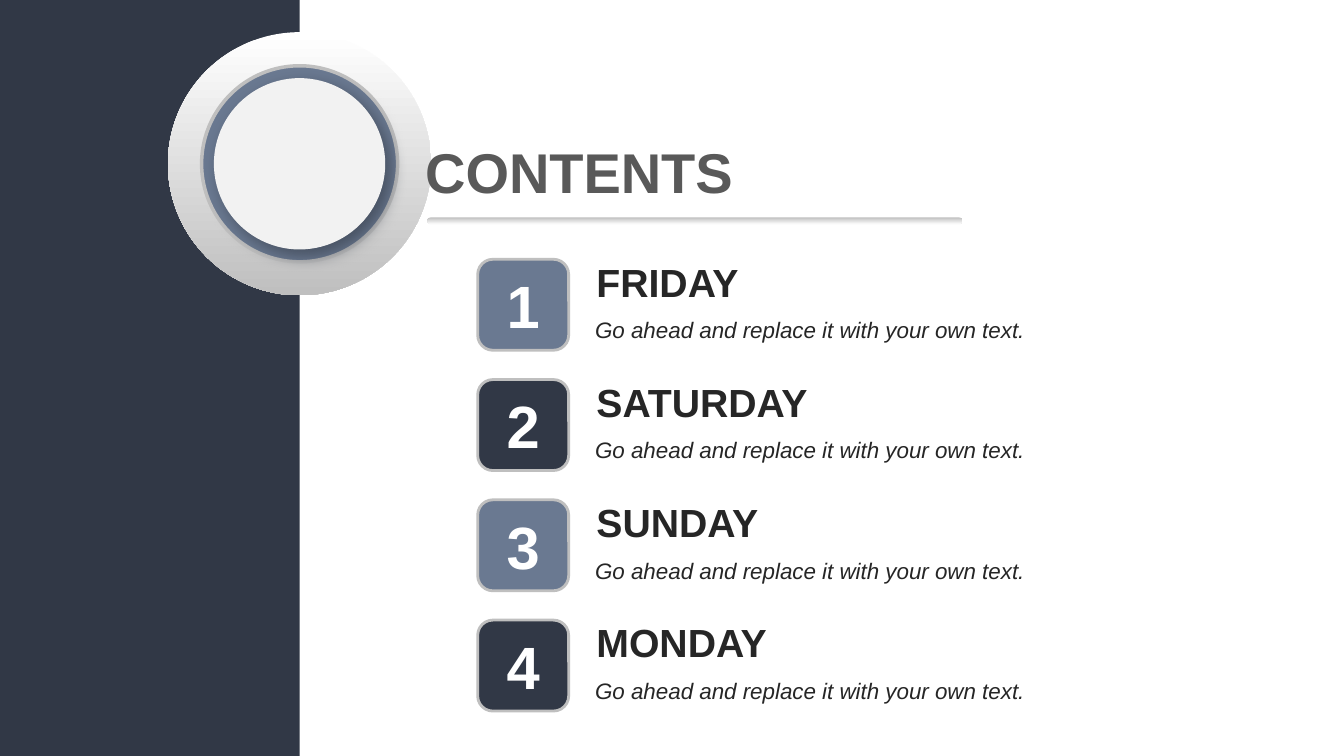
"""Build a contents slide with a notched side panel and four numbered days."""
import math

import lxml.etree
import pptx
import pptx.dml.color
import pptx.enum.shapes
import pptx.enum.text
import pptx.oxml.ns
import pptx.util

Pt = pptx.util.Pt
SHAPES = pptx.enum.shapes.MSO_SHAPE
COLOURS = {
    "navy": "313846", "slate": "6A7991", "silver": "BFBFBF", "white": "FFFFFF",
    "disc": "F2F2F2", "title": "595959", "body": "262626", "shadow": "353C48",
}
DAYS = ["FRIDAY", "SATURDAY", "SUNDAY", "MONDAY"]
DETAIL = "Go ahead and replace it with your own text."


def colour(name):
    """Return the named colour."""
    return pptx.dml.color.RGBColor.from_string(COLOURS[name])


def paint(shape, fill, line=None, width=0):
    """Give a shape a solid fill, an optional outline and no shadow."""
    shape.shadow.inherit = False
    shape.fill.solid()
    shape.fill.fore_color.rgb = colour(fill)
    if line:
        shape.line.color.rgb = colour(line)
        shape.line.width = Pt(width)
    else:
        shape.line.fill.background()


def shade(shape, top, bottom):
    """Fill a shape with a gradient running from top to bottom."""
    paint(shape, top)
    shape.fill.gradient()
    shape.fill.gradient_angle = 270
    for stop, name in zip(shape.fill.gradient_stops, (top, bottom)):
        stop.color.rgb = colour(name)


def cast_shadow(shape, name, alpha, blur, distance, angle):
    """Add an outer shadow to a shape."""
    qn = pptx.oxml.ns.qn
    effects = shape._element.spPr.find(qn("a:effectLst"))
    outer = lxml.etree.SubElement(
        effects, qn("a:outerShdw"), blurRad=str(Pt(blur)), dist=str(Pt(distance)),
        dir=str(angle * 60000), algn="tl", rotWithShape="0")
    tint = lxml.etree.SubElement(outer, qn("a:srgbClr"), val=COLOURS[name])
    lxml.etree.SubElement(tint, qn("a:alpha"), val=str(alpha * 1000))


def write(shape, text, size, name, bold=False, italic=False):
    """Put one styled paragraph in a shape and return it."""
    shape.text_frame.word_wrap = True
    para = shape.text_frame.paragraphs[0]
    para.text = text
    font = para.font
    font.name, font.size, font.bold, font.italic = "Arial", Pt(size), bold, italic
    font.color.rgb = colour(name)
    return para


def add_text(page, left, top, width, height, *style, **emphasis):
    """Add a text box holding one styled paragraph."""
    box = page.shapes.add_textbox(Pt(left), Pt(top), Pt(width), Pt(height))
    write(box, *style, **emphasis)


def add_panel(page, left, top, right, bottom, notch_middle, notch_radius):
    """Draw the side panel with a half-round notch in its right edge."""
    arc = [(right - notch_radius * math.sin(math.radians(turn)),
            notch_middle - notch_radius * math.cos(math.radians(turn)))
           for turn in range(0, 181, 5)]
    outline = [(right, top), *arc, (right, bottom), (left, bottom)]
    builder = page.shapes.build_freeform(Pt(left), Pt(top))
    builder.add_line_segments([(Pt(x), Pt(y)) for x, y in outline])
    paint(builder.convert_to_shape(), "navy")


def add_medallion(page, middle_x, middle_y, radius):
    """Draw the three concentric circles around a centre."""
    rim, ring, disc = [
        page.shapes.add_shape(SHAPES.OVAL, Pt(middle_x - r), Pt(middle_y - r), Pt(2 * r), Pt(2 * r))
        for r in (radius, radius - 24, radius - 32.8)]
    shade(rim, "white", "silver")
    paint(ring, "slate", "silver", 2.5)
    paint(disc, "disc")
    cast_shadow(disc, "shadow", 64, 12, 6, 45)


def add_title(page, left, top):
    """Write the title above its shaded rule."""
    add_text(page, left, top, 334, 55.4, "CONTENTS", 40, "title", bold=True)
    rule = page.shapes.add_shape(
        SHAPES.ROUNDED_RECTANGLE, Pt(left + 8.6), Pt(top + 60.3), Pt(382.3), Pt(5))
    rule.adjustments[0] = 0.5
    shade(rule, "silver", "white")


def add_day(page, left, top, number, day):
    """Draw one numbered badge with its heading and detail."""
    add_text(page, left + 77.8, top - 4.5, 232.6, 41, day, 28, "body", bold=True)
    badge = page.shapes.add_shape(
        SHAPES.ROUNDED_RECTANGLE, Pt(left), Pt(top), Pt(65), Pt(65))
    paint(badge, "slate" if number % 2 else "navy", "silver", 2)
    badge.text_frame.vertical_anchor = pptx.enum.text.MSO_ANCHOR.MIDDLE
    para = write(badge, str(number), 42.6, "white", bold=True)
    para.alignment = pptx.enum.text.PP_ALIGN.CENTER
    add_text(page, left + 76.8, top + 37.2, 325.4, 26.6, DETAIL, 16, "body", italic=True)


def main():
    """Build and save the deck."""
    deck = pptx.Presentation()
    deck.slide_width, deck.slide_height = Pt(960), Pt(540)
    page = deck.slides.add_slide(deck.slide_layouts[6])
    add_panel(page, -9.4, 0, 214, 540, 117, 86)
    add_medallion(page, 214, 117, 94)
    add_title(page, 296.6, 95)
    for index, day in enumerate(DAYS):
        add_day(page, 341.2, 185.2 + 85.9 * index, index + 1, day)
    deck.save("out.pptx")


if __name__ == "__main__":
    main()
